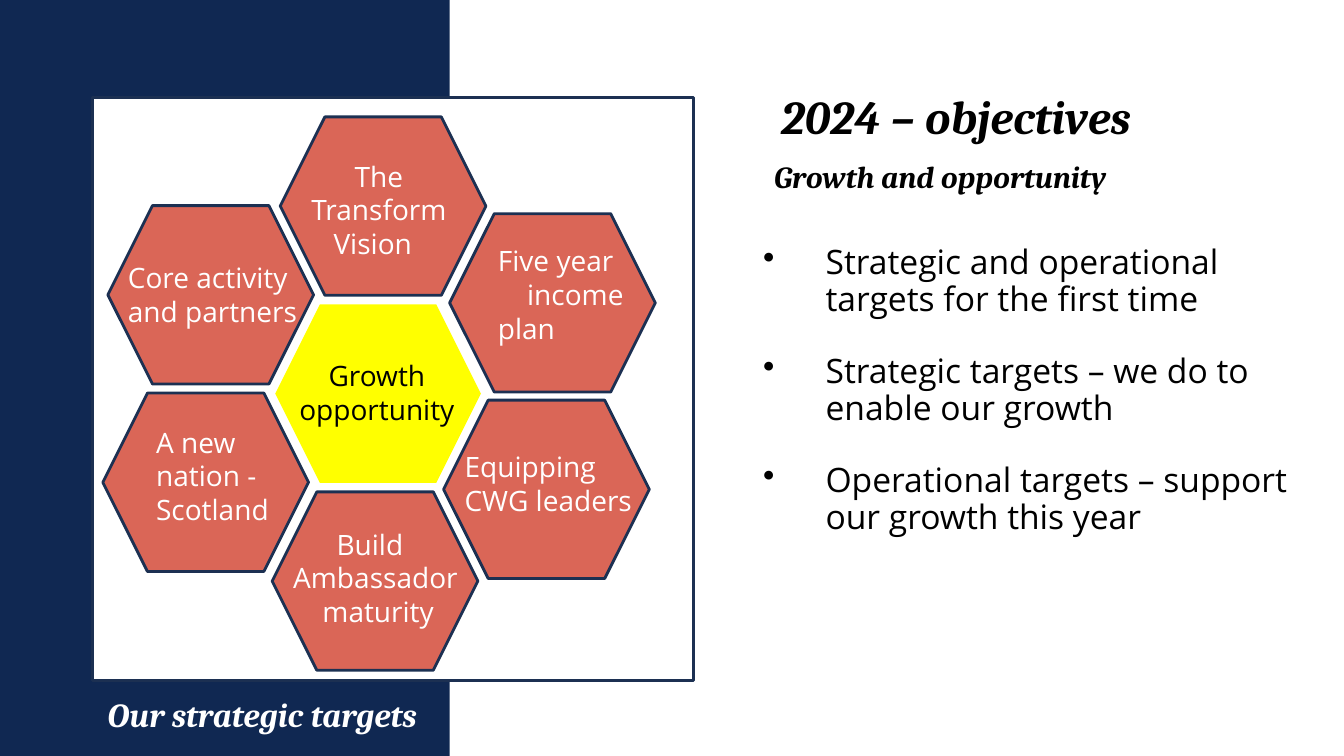
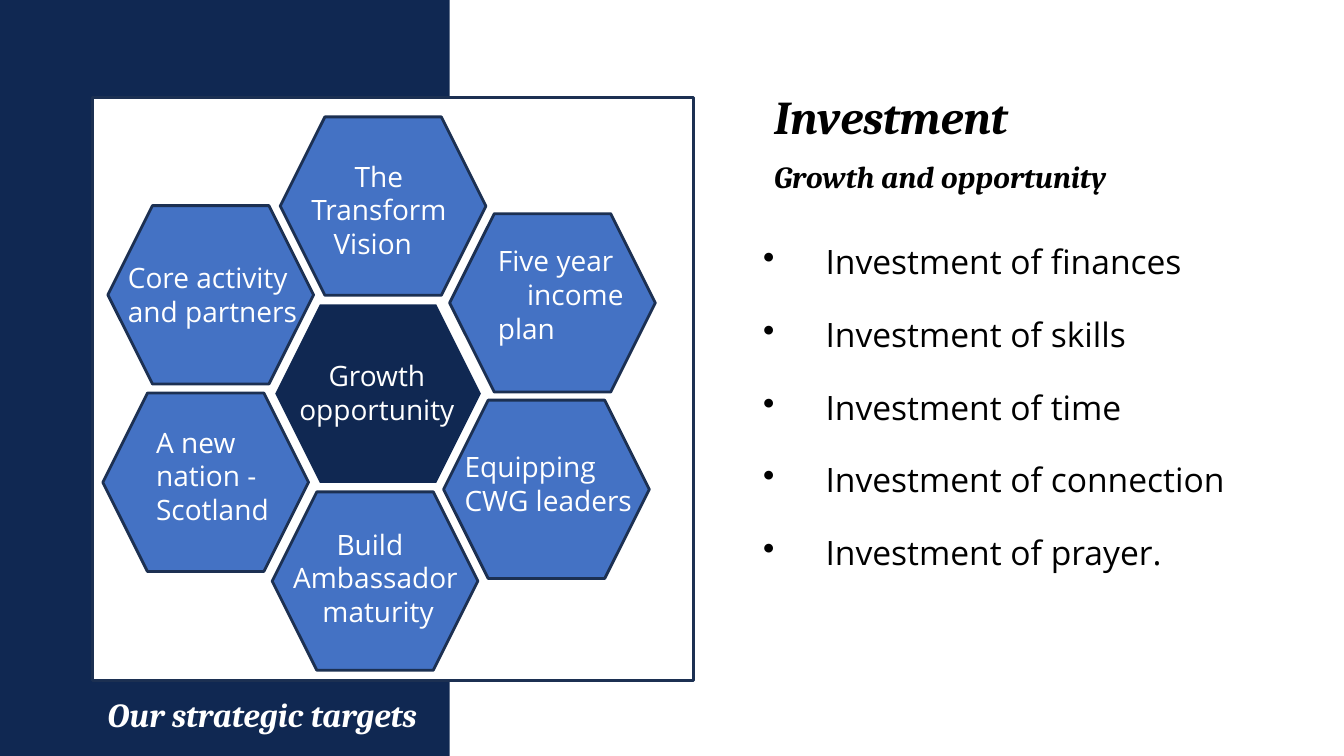
"""Build two slides of strategic targets around a honeycomb diagram."""
from dataclasses import dataclass
from typing import Optional

from lxml import etree
from pptx import Presentation
from pptx.dml.color import RGBColor
from pptx.enum import shapes, text
from pptx.oxml import ns
from pptx.util import Inches, Pt

NAVY = RGBColor(0x10, 0x28, 0x52)
OUTLINE = RGBColor(0x1C, 0x30, 0x52)
CORAL = RGBColor(0xDA, 0x66, 0x57)
BLUE = RGBColor(0x44, 0x72, 0xC4)
YELLOW = RGBColor(0xFF, 0xFF, 0x00)
WHITE = RGBColor(0xFF, 0xFF, 0xFF)
BLACK = RGBColor(0x00, 0x00, 0x00)

HEADING_FONT = "Cambria"
BODY_FONT = "Open Sans"
HEXAGON_WIDTH, HEXAGON_HEIGHT = 2.04, 1.77
BULLET_INDENT = 0.62


@dataclass(frozen=True)
class Line:
    """A line of a label with its left indent in inches."""
    wording: str
    indent: float = 0


@dataclass(frozen=True)
class Cell:
    """A hexagon and the box of its label, in inches."""
    left: float
    top: float
    label_box: tuple[float, float, float, float]
    lines: tuple[Line, ...]
    is_centre: bool = False


@dataclass(frozen=True)
class Page:
    """The wording and colours that set one slide apart."""
    title: str
    title_indent: float
    bullets: tuple[str, ...]
    cell_fill: RGBColor
    centre_fill: RGBColor
    centre_text: RGBColor


CELLS = (
    Cell(2.78, 1.16, (2.99, 1.53, 1.77, 1.11),
         (Line("The", 0.43), Line("Transform"), Line("Vision", 0.22))),
    Cell(4.46, 2.12, (4.84, 2.37, 1.77, 1.11),
         (Line("Five year"), Line("income", 0.29), Line("plan"))),
    Cell(1.02, 3.9, (1.45, 4.17, 1.77, 1.11),
         (Line("A new"), Line("nation -"), Line("Scotland"))),
    Cell(1.07, 2.04, (1.17, 2.54, 2.46, 0.77),
         (Line("Core activity"), Line("and partners"))),
    Cell(2.73, 3.02, (2.87, 3.51, 1.77, 0.77),
         (Line("Growth", 0.29), Line("opportunity")), is_centre=True),
    Cell(2.7, 4.88, (2.81, 5.18, 2.07, 1.11),
         (Line("Build", 0.43), Line("Ambassador"), Line("maturity", 0.29))),
    Cell(4.4, 3.97, (4.51, 4.41, 2.46, 0.77),
         (Line("Equipping"), Line("CWG leaders"))),
)

PAGES = (
    Page("2024 – objectives", 0.07,
         ("Strategic and operational targets for the first time",
          "Strategic targets – we do to enable our growth",
          "Operational targets – support our growth this year"),
         CORAL, YELLOW, BLACK),
    Page("Investment", 0,
         ("Investment of finances", "Investment of skills", "Investment of time",
          "Investment of connection", "Investment of prayer."),
         BLUE, NAVY, WHITE),
)


def add_panel(slide, kind, box: tuple[float, float, float, float],
              fill: RGBColor, outline: Optional[RGBColor] = None) -> None:
    """Add a filled shape, outlined if a line colour is given."""
    shape = slide.shapes.add_shape(kind, *map(Inches, box))
    shape.shadow.inherit = False
    shape.fill.solid()
    shape.fill.fore_color.rgb = fill
    if outline is None:
        shape.line.fill.background()
    else:
        shape.line.color.rgb = outline
        shape.line.width = Pt(2)


def add_text_frame(slide, box: tuple[float, float, float, float]):
    """Add a wrapping text box and return its frame."""
    frame = slide.shapes.add_textbox(*map(Inches, box)).text_frame
    frame.word_wrap = True
    frame.vertical_anchor = text.MSO_ANCHOR.TOP
    return frame


def add_paragraph(frame, wording: str, size: float, color: RGBColor,
                  heading: bool = False, indent: float = 0,
                  bullet: bool = False, spacing: Optional[float] = None,
                  before: float = 0) -> None:
    """Write a paragraph, reusing the first one while it is empty."""
    first = frame.paragraphs[0]
    is_first = not first.runs
    paragraph = first if is_first else frame.add_paragraph()
    paragraph.text = wording
    properties = paragraph._p.get_or_add_pPr()
    if indent:
        properties.set("marL", str(Inches(indent)))
    if bullet:
        properties.set("indent", str(-Inches(indent)))
        bullet_color = etree.SubElement(properties, ns.qn("a:buClr"))
        etree.SubElement(bullet_color, ns.qn("a:srgbClr"), val=str(color))
        etree.SubElement(properties, ns.qn("a:buChar"), char="•")
    if spacing:
        paragraph.line_spacing = spacing
    if before and not is_first:
        paragraph.space_before = Pt(before)
    font = paragraph.runs[0].font
    font.name = HEADING_FONT if heading else BODY_FONT
    font.size = Pt(size)
    font.color.rgb = color
    font.bold = font.italic = heading


def add_headings(slide, page: Page) -> None:
    """Add the title and its subtitle."""
    frame = add_text_frame(slide, (7.58, 0.97, 5.33, 1.03))
    add_paragraph(frame, page.title, 33.6, BLACK, heading=True,
                  indent=page.title_indent, spacing=0.7)
    add_paragraph(frame, "Growth and opportunity", 22, BLACK, heading=True,
                  spacing=0.7, before=18)


def add_bullets(slide, page: Page) -> None:
    """Add the bulleted list."""
    frame = add_text_frame(slide, (7.47, 2.39, 5.54, 4.16))
    for wording in page.bullets:
        add_paragraph(frame, wording, 24, BLACK, indent=BULLET_INDENT,
                      bullet=True, spacing=0.9, before=26)


def add_honeycomb(slide, page: Page) -> None:
    """Add the framed hexagons and their labels."""
    add_panel(slide, shapes.MSO_SHAPE.RECTANGLE, (0.92, 0.97, 5.96, 5.78), WHITE, OUTLINE)
    for cell in CELLS:
        add_panel(slide, shapes.MSO_SHAPE.HEXAGON,
                  (cell.left, cell.top, HEXAGON_WIDTH, HEXAGON_HEIGHT),
                  page.centre_fill if cell.is_centre else page.cell_fill,
                  None if cell.is_centre else OUTLINE)
    for cell in CELLS:
        frame = add_text_frame(slide, cell.label_box)
        frame.auto_size = text.MSO_AUTO_SIZE.SHAPE_TO_FIT_TEXT
        color = page.centre_text if cell.is_centre else WHITE
        for line in cell.lines:
            add_paragraph(frame, line.wording, 20, color, indent=line.indent)


def add_page(presentation, page: Page) -> None:
    """Add one complete slide."""
    slide = presentation.slides.add_slide(presentation.slide_layouts[6])
    add_panel(slide, shapes.MSO_SHAPE.RECTANGLE, (0, 0, 4.46, 7.5), NAVY)
    add_headings(slide, page)
    add_bullets(slide, page)
    add_honeycomb(slide, page)
    caption = add_text_frame(slide, (0.97, 6.88, 3.49, 0.5))
    add_paragraph(caption, "Our strategic targets", 24, WHITE, heading=True, spacing=0.9)


def main() -> None:
    """Build and save the presentation."""
    presentation = Presentation()
    presentation.slide_width = Inches(13.33)
    presentation.slide_height = Inches(7.5)
    for page in PAGES:
        add_page(presentation, page)
    presentation.save("out.pptx")


if __name__ == "__main__":
    main()
